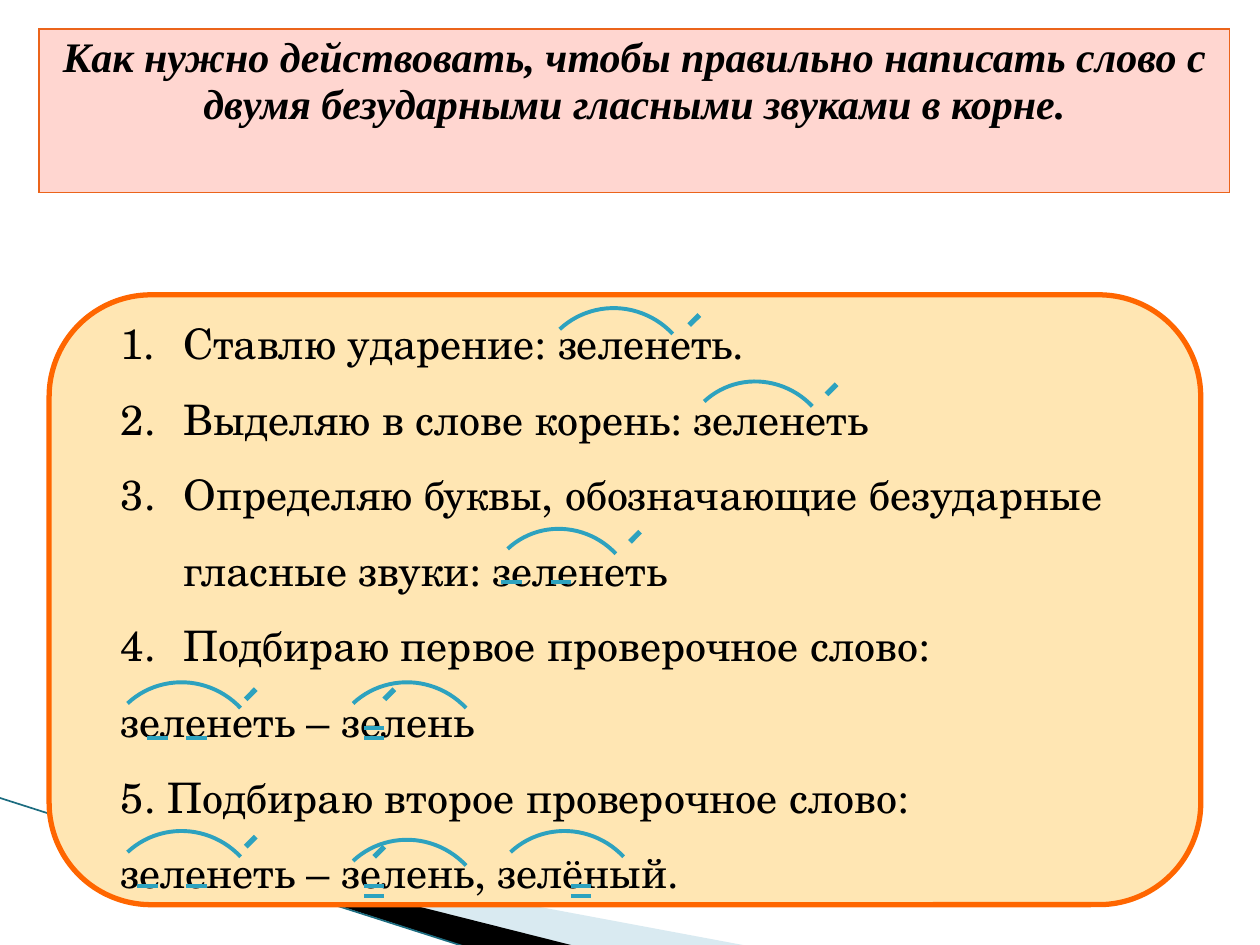
from lxml import etree
from pptx import Presentation
from pptx import util as u
from pptx.dml.color import RGBColor
from pptx.enum import shapes, text
from pptx.oxml.ns import qn

MARK = "2DA2BF"
HEADING = ("Как нужно действовать, чтобы правильно написать слово с двумя "
           "безударными гласными звуками в корне.")
STEPS = [
    ("Ставлю ударение: зеленеть.", True),
    ("Выделяю в слове корень: зеленеть", True),
    ("Определяю буквы, обозначающие безударные гласные звуки: зеленеть", True),
    ("Подбираю первое проверочное слово:", True),
    ("зеленеть – зелень", False),
    ("5. Подбираю второе проверочное слово:", False),
    ("зеленеть – зелень, зелёный.", False),
]
SMALL_ROOTS = [(5.41, 3.02), (3.85, 4.19)]
LARGE_ROOTS = [(4.25, 2.44), (0.82, 5.41), (2.61, 5.41),
               (0.82, 6.59), (2.61, 6.66), (3.86, 6.59)]
STRESSES = [(5.47, 2.58), (6.56, 3.13), (5, 4.3), (1.95, 5.55),
            (3.05, 5.55), (1.95, 6.72), (2.97, 6.8)]
UNDERLINES = [(3.98, 4.62), (4.37, 4.62), (1.17, 5.86), (1.48, 5.86),
              (1.09, 7.03), (1.48, 7.03)]
DOUBLE_UNDERLINES = [(2.89, 5.78), (2.89, 7.03), (4.53, 7.03)]


def color(value):
    """Turn a hex string into a colour."""
    return RGBColor.from_string(value)


def add_line(page, start, end, line_color, width):
    """Draw a straight line without a shadow."""
    line = page.shapes.add_connector(
        shapes.MSO_CONNECTOR.STRAIGHT, *map(u.Inches, start + end))
    line.line.color.rgb = color(line_color)
    line.line.width = u.Pt(width)
    etree.SubElement(line._element.spPr, qn("a:effectLst"))


def add_wedge(page, points, fill):
    """Draw a filled polygon without an outline."""
    corners = [(u.Inches(x), u.Inches(y)) for x, y in points]
    builder = page.shapes.build_freeform(*corners[0])
    builder.add_line_segments(corners[1:], close=True)
    wedge = builder.convert_to_shape()
    wedge.shadow.inherit = False
    wedge.fill.solid()
    wedge.fill.fore_color.rgb = color(fill)
    wedge.line.fill.background()


def add_panel(page):
    """Draw the rounded panel behind the steps."""
    panel = page.shapes.add_shape(
        shapes.MSO_SHAPE.ROUNDED_RECTANGLE,
        *map(u.Inches, (0.39, 2.34, 9.14, 4.84)))
    panel.adjustments[0] = 0.167
    panel.shadow.inherit = False
    panel.fill.solid()
    panel.fill.fore_color.rgb = color("FFE6B3")
    panel.line.color.rgb = color("FF6600")
    panel.line.width = u.Pt(3)


def style_font(para, name, **flags):
    """Set the black 24-point font of a paragraph."""
    font = para.font
    font.name, font.size = name, u.Pt(24)
    font.color.rgb = color("000000")
    for flag, value in flags.items():
        setattr(font, flag, value)


def add_steps(page):
    """Write the steps, numbering those that carry a number."""
    box = page.shapes.add_textbox(*map(u.Inches, (0.86, 2.27, 8.44, 5.55)))
    frame = box.text_frame
    frame.word_wrap = True
    for index, (words, numbered) in enumerate(STEPS):
        para = frame.add_paragraph() if index else frame.paragraphs[0]
        para.text = words
        para.line_spacing = 1.5
        props = para._p.get_or_add_pPr()
        props.set("marL", str(u.Inches(0.5)))
        props.set("indent", str(u.Inches(-0.5)))
        if numbered:
            etree.SubElement(props, qn("a:buAutoNum"), type="arabicPeriod")
        else:
            etree.SubElement(props, qn("a:buNone"))
        style_font(para, "TeX Gyre Schola")


def add_root(page, left, top, width, height):
    """Draw the arc that marks the root of a word."""
    arc = page.shapes.add_shape(
        shapes.MSO_SHAPE.ARC, *map(u.Inches, (left, top, width, height)))
    arc.rotation = 316.9
    arc.shadow.inherit = False
    arc.fill.background()
    arc.line.color.rgb = color(MARK)
    arc.line.width = u.Pt(2.25)


def add_underline(page, left, top):
    """Underline one letter."""
    add_line(page, (left, top), (left + 0.16, top), MARK, 2.25)


def add_heading(page):
    """Write the heading in a bordered one-cell table."""
    table = page.shapes.add_table(
        1, 1, *map(u.Inches, (0.31, 0.23, 9.45, 1.3))).table
    cell = table.cell(0, 0)
    para = cell.text_frame.paragraphs[0]
    para.text = HEADING
    para.alignment = text.PP_ALIGN.CENTER
    style_font(para, "Times New Roman", bold=True, italic=True)
    props = cell._tc.get_or_add_tcPr()
    for side in ("lnL", "lnR", "lnT", "lnB"):
        edge = etree.SubElement(props, qn(f"a:{side}"), w=str(u.Pt(0.75)))
        fill = etree.SubElement(edge, qn("a:solidFill"))
        etree.SubElement(fill, qn("a:srgbClr"), val="EB641B")
    cell.fill.solid()
    cell.fill.fore_color.rgb = color("FFD6D0")


def main():
    """Build the slide and save it."""
    deck = Presentation()
    deck.slide_width, deck.slide_height = u.Inches(10), u.Inches(7.5)
    page = deck.slides.add_slide(deck.slide_layouts[6])
    add_wedge(page, [(0.55, 6.5), (5.95, 7.51), (4.56, 7.51)], "D9EAF1")
    add_wedge(page, [(0.53, 6.49), (4.57, 7.51), (3.72, 7.52)], "000000")
    add_line(page, (-0.01, 6.33), (3.71, 7.52), "1C6C80", 0.95)
    add_panel(page)
    add_steps(page)
    for left, top in SMALL_ROOTS:
        add_root(page, left, top, 1.2, 1.23)
    for left, top in LARGE_ROOTS:
        add_root(page, left, top, 1.26, 1.28)
    for left, top in STRESSES:
        add_line(page, (left + 0.08, top - 0.08), (left, top), MARK, 3)
    for left, top in UNDERLINES:
        add_underline(page, left, top)
    for left, top in DOUBLE_UNDERLINES:
        add_underline(page, left, top)
        add_underline(page, left, top + 0.08)
    add_heading(page)
    deck.save("out.pptx")


if __name__ == "__main__":
    main()
